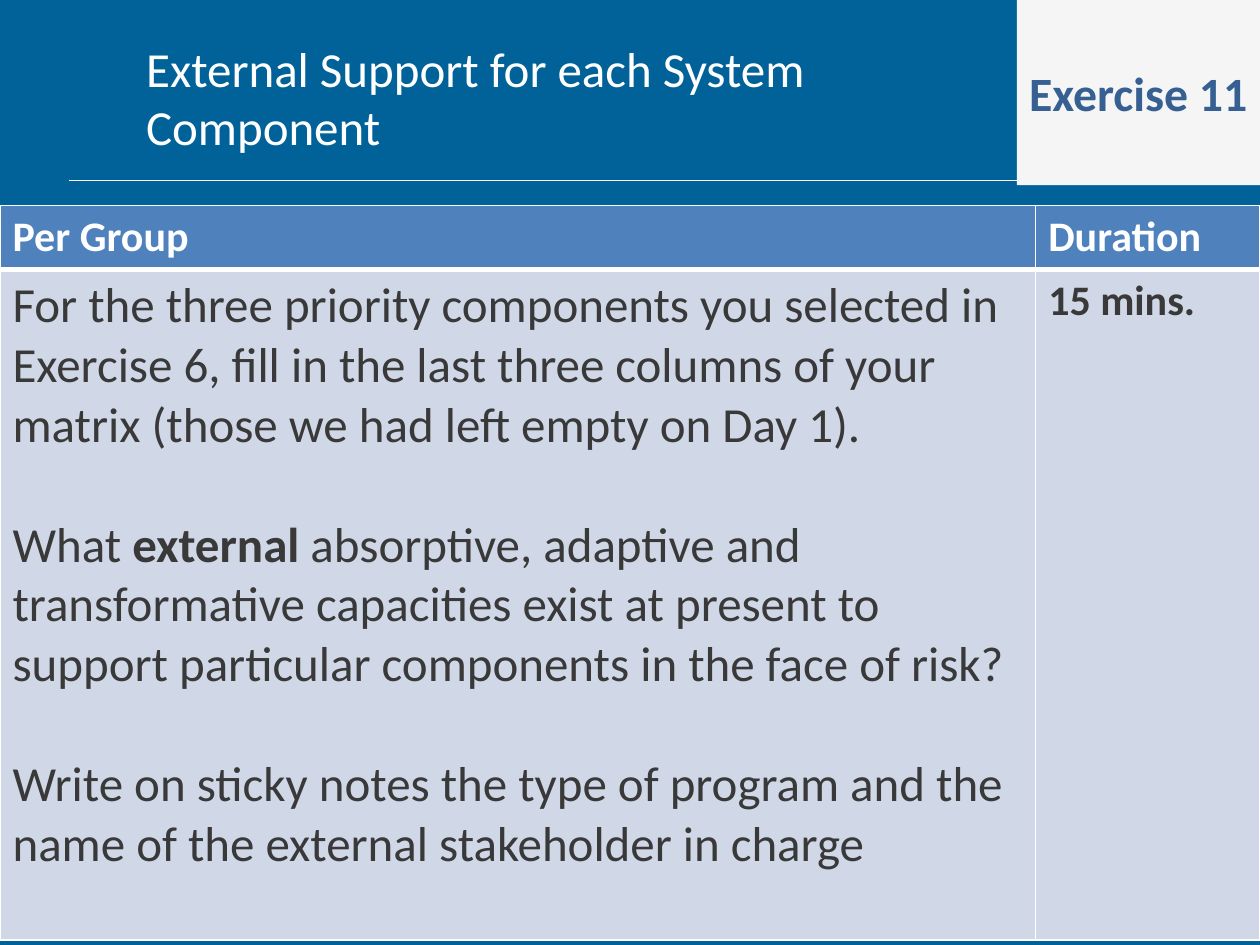
from pptx import Presentation
from pptx.dml.color import RGBColor
from pptx.enum.shapes import MSO_CONNECTOR, MSO_SHAPE
from pptx.enum.text import MSO_ANCHOR, MSO_AUTO_SIZE, PP_ALIGN
from pptx.oxml import parse_xml
from pptx.oxml.ns import nsdecls
from pptx.util import Inches, Pt

# Content: each cell is a list of paragraphs, each paragraph a list of (text, bold)
TITLE = "External Support for each System Component"
BADGE = "Exercise 11"
HEAD = [[[("Per Group", True)]], [[("Duration", True)]]]
TASK = [
    [("For the three priority components you selected in Exercise 6, fill in "
      "the last three columns of your matrix (those we had left empty on Day 1).", False)],
    [("What ", False), ("external", True),
     (" absorptive, adaptive and transformative capacities exist at present to "
      "support particular components in the face of risk?", False)],
    [("Write on sticky notes the type of program and the name of the external "
      "stakeholder in charge", False)],
]
TIME = [[("15 mins.", True)]]

# Theme
THEME = {
    "font": "Calibri", "back": "006299", "white": "FFFFFF", "pale": "F5F5F5",
    "navy": "376092", "blue": "4F81BD", "tint": "D0D8E8", "ink": "393939",
    "big": 28, "mid": 27.3, "small": 24, "gap": 34.2,
}

# Grid, in inches
WIDE, HIGH = 10, 7.5
COLS = (8.22, 1.78)
ROWS = (0.51, 5.32)
TOP = 1.63
SIDE = 1.93


def tone(key):
    return RGBColor.from_string(THEME[key])


def paint(fill, key):
    fill.solid()
    fill.fore_color.rgb = tone(key)


def write(frame, paras, size, key, gap=0):
    """Fill a text frame with paragraphs of (text, bold) runs."""
    for i, runs in enumerate(paras):
        para = frame.add_paragraph() if i else frame.paragraphs[0]
        para.alignment = PP_ALIGN.LEFT
        if i:
            para.space_before = Pt(gap)
        for text, bold in runs:
            run = para.add_run()
            run.text = text
            look = {"name": THEME["font"], "size": Pt(THEME[size]), "bold": bold}
            for name, value in look.items():
                setattr(run.font, name, value)
            run.font.color.rgb = tone(key)


def edge(cell, sides):
    """Draw white cell borders; sides maps a side letter to points."""
    props = cell._tc.get_or_add_tcPr()
    for i, (side, width) in enumerate(sides.items()):
        props.insert(i, parse_xml(
            f'<a:ln{side} {nsdecls("a")} w="{Pt(width)}"><a:solidFill>'
            f'<a:srgbClr val="{THEME["white"]}"/></a:solidFill></a:ln{side}>'))


deck = Presentation()
deck.slide_width, deck.slide_height = Inches(WIDE), Inches(HIGH)
slide = deck.slides.add_slide(deck.slide_layouts[5])
paint(slide.background.fill, "back")

# Title
title = slide.shapes.title
place = {"left": 1.06, "top": 0.21, "width": 6.89, "height": 1.12}
for name, value in place.items():
    setattr(title, name, Inches(value))
frame = title.text_frame
form = {"word_wrap": True, "auto_size": MSO_AUTO_SIZE.NONE,
        "vertical_anchor": MSO_ANCHOR.MIDDLE}
for name, value in form.items():
    setattr(frame, name, value)
write(frame, [[(TITLE, False)]], "big", "white")

# Rule under the title
rule = slide.shapes.add_connector(
    MSO_CONNECTOR.STRAIGHT, Inches(0.55), Inches(1.43), Inches(9.47), Inches(1.43))
rule.line.width = Pt(0.5)
rule.line.color.rgb = tone("white")
rule._element.spPr.append(parse_xml(f'<a:effectLst {nsdecls("a")}/>'))

# Exercise badge
badge = slide.shapes.add_shape(
    MSO_SHAPE.RECTANGLE, Inches(WIDE - SIDE), 0, Inches(SIDE), Inches(1.47))
badge.shadow.inherit = False
badge.line.fill.background()
paint(badge.fill, "pale")
for name, value in form.items():
    setattr(badge.text_frame, name, value)
write(badge.text_frame, [[(BADGE, True)]], "mid", "navy")

# Task table
table = slide.shapes.add_table(
    len(ROWS), len(COLS), 0, Inches(TOP), Inches(WIDE), Inches(sum(ROWS))).table
for col, width in zip(table.columns, COLS):
    col.width = Inches(width)
for row, height in zip(table.rows, ROWS):
    row.height = Inches(height)

LOOKS = [("small", "small"), ("big", "small")]
HUES = [("blue", "white"), ("tint", "ink")]
EDGES = [{"L": 1, "R": 1, "T": 1, "B": 3}, {"L": 1, "R": 1, "T": 3, "B": 1}]
for r, cells in enumerate([HEAD, [TASK, TIME]]):
    back, ink = HUES[r]
    for c, paras in enumerate(cells):
        cell = table.cell(r, c)
        paint(cell.fill, back)
        edge(cell, EDGES[r])
        write(cell.text_frame, paras, LOOKS[r][c], ink, THEME["gap"])

deck.save("out.pptx")
